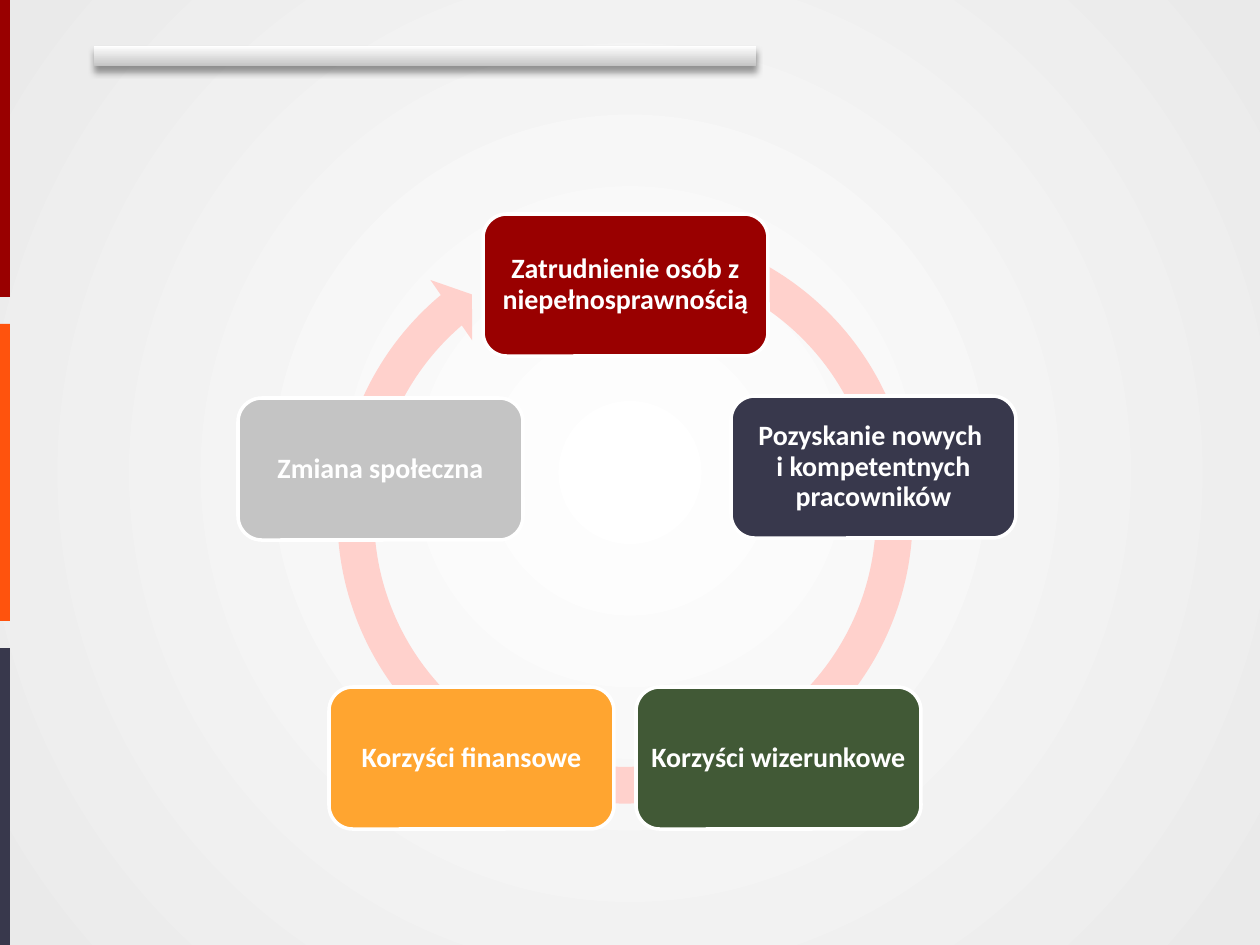
"""Build the slide with the employment benefits cycle."""
from lxml import etree
from pptx import Presentation
from pptx.dml.color import RGBColor
from pptx.enum.shapes import MSO_SHAPE
from pptx.enum.text import MSO_ANCHOR, PP_ALIGN
from pptx.oxml.ns import qn
from pptx.util import Emu, Pt

RECTANGLE = MSO_SHAPE.RECTANGLE
ROUNDED = MSO_SHAPE.ROUNDED_RECTANGLE
CIRCULAR_ARROW = MSO_SHAPE.CIRCULAR_ARROW
MIDDLE = MSO_ANCHOR.MIDDLE
CENTER = PP_ALIGN.CENTER
EMU_PER_PX = 914400 / 126


def px(value):
    return Emu(round(value * EMU_PER_PX))


def color(value):
    return RGBColor.from_string(value)


def apply(target, values):
    for name, value in values.items():
        setattr(target, name, value)


def add_element(parent, tag, **attributes):
    return etree.SubElement(parent, qn(tag), attributes)


class CycleSlide:
    frame_format = {
        "word_wrap": True,
        "vertical_anchor": MIDDLE,
        "margin_left": px(7),
        "margin_right": px(7),
        "margin_top": px(9),
        "margin_bottom": px(9),
    }
    paragraph_format = {"alignment": CENTER, "line_spacing": 0.9}
    font_format = {"name": "Calibri", "size": Pt(16), "bold": True}

    def __init__(self, slide):
        self.slide = slide

    def gradient(self, fill, colors):
        fill.gradient()
        for stop, value in zip(fill.gradient_stops, colors):
            stop.color.rgb = color(value)

    def background(self, center, edge):
        self.gradient(self.slide.background.fill, (center, edge))
        gradient = self.slide.element.find(".//" + qn("a:gradFill"))
        gradient.remove(gradient.find(qn("a:lin")))
        circle = add_element(gradient, "a:path", path="circle")
        add_element(circle, "a:fillToRect", l="50000", t="50000", r="50000", b="50000")

    def shape(self, kind, box, fill=None):
        shape = self.slide.shapes.add_shape(kind, *map(px, box))
        shape.shadow.inherit = False
        shape.line.fill.background()
        if fill:
            shape.fill.solid()
            shape.fill.fore_color.rgb = color(fill)
        return shape

    def header_bar(self, box, bottom, top):
        shape = self.shape(RECTANGLE, box)
        self.gradient(shape.fill, (bottom, top))
        shape.fill.gradient_angle = 90
        effects = shape.element.spPr.find(qn("a:effectLst"))
        shadow = add_element(
            effects, "a:outerShdw", blurRad=str(Pt(4)), dist=str(Pt(3)),
            dir="5400000", rotWithShape="0",
        )
        black = add_element(shadow, "a:srgbClr", val="000000")
        add_element(black, "a:alpha", val="40000")

    def ring(self, box, fill, adjustments):
        shape = self.shape(CIRCULAR_ARROW, box, fill)
        for index, value in enumerate(adjustments):
            shape.adjustments[index] = value

    def step(self, left, top, fill, text):
        shape = self.shape(ROUNDED, (left, top, 285, 142), fill)
        shape.line.color.rgb = color("FFFFFF")
        shape.line.width = Pt(2)
        frame = shape.text_frame
        apply(frame, self.frame_format)
        paragraph = frame.paragraphs[0]
        paragraph.text = text
        apply(paragraph, self.paragraph_format)
        for run in paragraph.runs:
            apply(run.font, self.font_format)
            run.font.color.rgb = color("FFFFFF")


def main():
    presentation = Presentation()
    presentation.slide_width = px(1260)
    presentation.slide_height = px(945)
    layout = presentation.slide_layouts.get_by_name("Blank")
    cycle = CycleSlide(presentation.slides.add_slide(layout))
    cycle.background("FFFFFF", "EAEAEA")
    for index, fill in enumerate(("990000", "FF530D", "38384C")):
        cycle.shape(RECTANGLE, (0, index * 324, 10, 297), fill)
    cycle.header_bar((94, 46, 662, 20), "C4C4C4", "FFFFFF")
    cycle.ring((319, 210, 612, 612), "FFD1CC", (0.06, 3.31, 137.9, 173.77, 0.06))
    steps = (
        (483, 214, "990000", "Zatrudnienie osób z niepełnosprawnością"),
        (731, 396, "38384C", "Pozyskanie nowych \vi kompetentnych pracowników"),
        (636, 687, "415936", "Korzyści wizerunkowe"),
        (329, 687, "FFA530", "Korzyści finansowe"),
        (238, 398, "C4C4C4", "Zmiana społeczna"),
    )
    for step in steps:
        cycle.step(*step)
    presentation.save("out.pptx")


if __name__ == "__main__":
    main()
